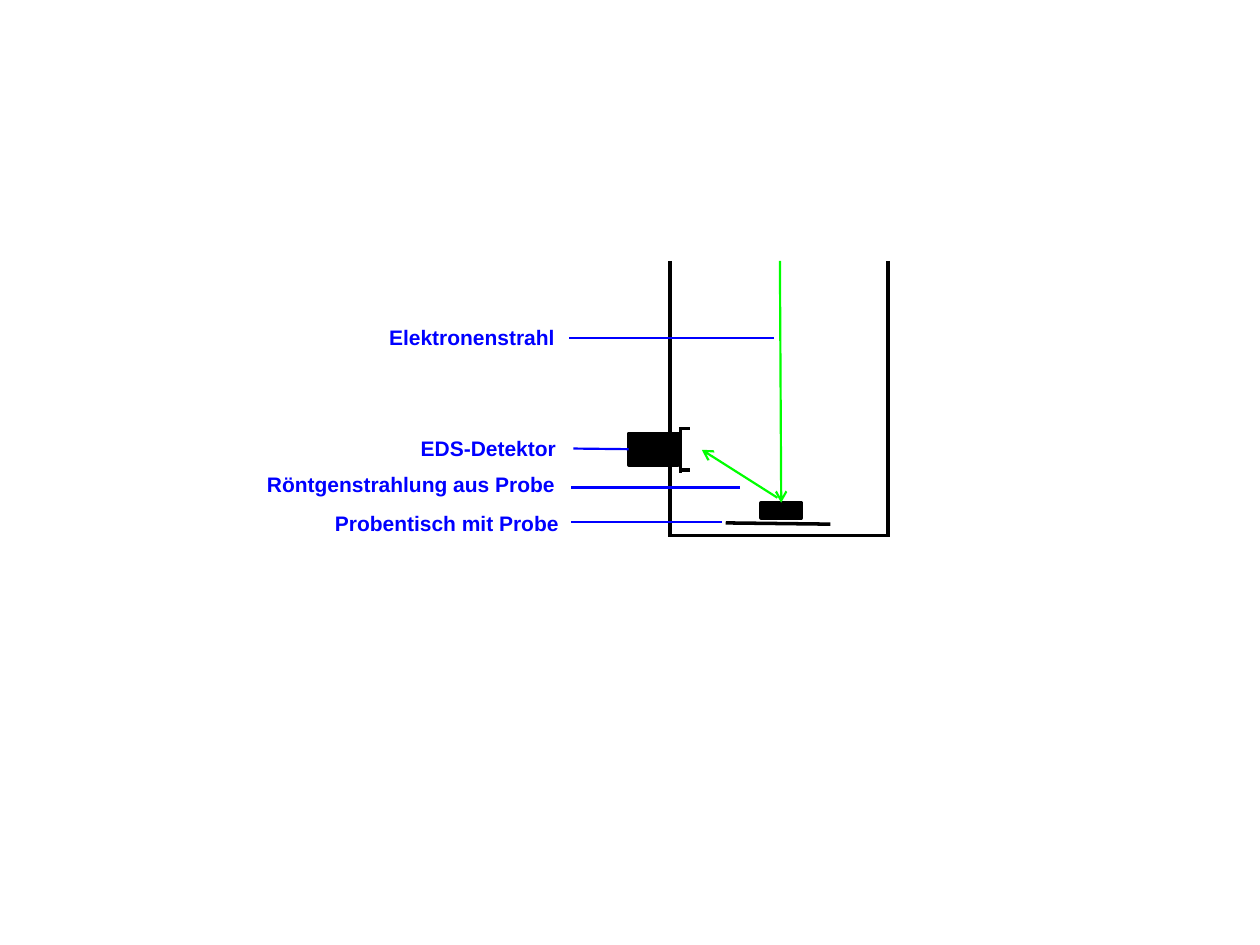
import pptx
import pptx.dml.color
import pptx.enum.shapes
import pptx.enum.text
import pptx.oxml
import pptx.oxml.ns
import pptx.util

PX = 9144  # EMU per px, 100 px to the inch
BLACK, GREEN, BLUE = "000000", "00FF00", "0000FF"


def px(length):
    return pptx.util.Emu(length * PX)


def rgb(color):
    return pptx.dml.color.RGBColor.from_string(color)


def add_line(shapes, start, end, color, width, arrow=False):
    line = shapes.add_connector(pptx.enum.shapes.MSO_CONNECTOR.STRAIGHT,
                                *map(px, (*start, *end)))
    line.line.color.rgb = rgb(color)
    line.line.width = pptx.util.Pt(width)
    properties = line._element.spPr
    if arrow:
        pptx.oxml.ns.qn("a:tailEnd")
        tail = pptx.oxml.parse_xml(
            f'<a:tailEnd {pptx.oxml.ns.nsdecls("a")} type="arrow"/>')
        properties.find(pptx.oxml.ns.qn("a:ln")).append(tail)
    properties.append(pptx.oxml.parse_xml(
        f'<a:effectLst {pptx.oxml.ns.nsdecls("a")}/>'))
    return line


def add_block(shapes, left, top, width, height):
    block = shapes.add_shape(pptx.enum.shapes.MSO_SHAPE.RECTANGLE,
                             *map(px, (left, top, width, height)))
    block.shadow.inherit = False
    block.fill.solid()
    block.fill.fore_color.rgb = rgb(BLACK)
    block.line.color.rgb = rgb(BLACK)
    block.line.width = pptx.util.Pt(2)
    return block


def add_chamber(shapes, left, top, width, height):
    """Chamber walls, open at the top, with sample, stage and beams."""
    right, bottom = left + width, top + height
    for x in (left, right):
        add_line(shapes, (x, top), (x, bottom + 1), BLACK, 2.25)
    add_line(shapes, (right, bottom), (left, bottom), BLACK, 2.25)

    sample = add_block(shapes, left + 72, bottom - 26, 32, 12)
    add_line(shapes, (left + 44, bottom - 10), (left + 127, bottom - 9), BLACK, 2)

    electron_beam = add_line(shapes, (left + 87, top), (left + 88, bottom - 26),
                             GREEN, 1.25, arrow=True)
    electron_beam.end_connect(sample, 0)
    add_line(shapes, (left + 85, bottom - 30), (left + 25, bottom - 68),
             GREEN, 1.25, arrow=True)


def add_detector(shapes, left, top, width, height):
    """Detector body with the bracket at its opening; returns the body."""
    bracket_x = left + width + 2
    bracket_top, bracket_bottom = top - 4, top + height + 4
    add_line(shapes, (bracket_x, bracket_top - 1), (bracket_x, bracket_bottom + 2),
             BLACK, 2)
    for y in (bracket_top, bracket_bottom):
        add_line(shapes, (bracket_x, y), (bracket_x + 8, y), BLACK, 2)
    return add_block(shapes, left, top, width, height)


def add_label(shapes, text, left, top, width, height=30, wrap=False):
    label = shapes.add_textbox(*map(px, (left, top, width, height)))
    frame = label.text_frame
    frame.word_wrap = wrap
    frame.auto_size = pptx.enum.text.MSO_AUTO_SIZE.SHAPE_TO_FIT_TEXT
    run = frame.paragraphs[0].add_run()
    run.text = text
    run.font.name = "Arial"
    run.font.size = pptx.util.Pt(12)
    run.font.bold = True
    run.font.color.rgb = rgb(BLUE)


def add_labels(shapes, left, top, detector):
    """Labels with leader lines running back from the parts they name."""
    add_label(shapes, "Elektronenstrahl", left + 97, top, 153)
    add_label(shapes, "EDS-Detektor", left + 122, top + 88, 128)
    add_label(shapes, "Röntgenstrahlung aus Probe", left, top + 116, 251)
    add_label(shapes, "Probentisch mit Probe", left + 54, top + 147, 220, wrap=True)

    for part_x, label_x, y in ((412, 250, 15), (385, 251, 134), (371, 251, 161)):
        add_line(shapes, (left + part_x, top + y), (left + label_x, top + y),
                 BLUE, 1.25)
    detector_leader = add_line(shapes, (left + 297, top + 103),
                               (left + 253, top + 103), BLUE, 1.25)
    detector_leader.begin_connect(detector, 1)


def main():
    presentation = pptx.Presentation()
    presentation.slide_width, presentation.slide_height = px(1000), px(750)
    slide = presentation.slides.add_slide(presentation.slide_layouts[6])
    diagram = slide.shapes.add_group_shape().shapes
    add_chamber(diagram, 532, 207, 173, 218)
    detector = add_detector(diagram, 499, 344, 39, 25)
    add_labels(diagram, 202, 253, detector)
    presentation.save("out.pptx")


if __name__ == "__main__":
    main()
